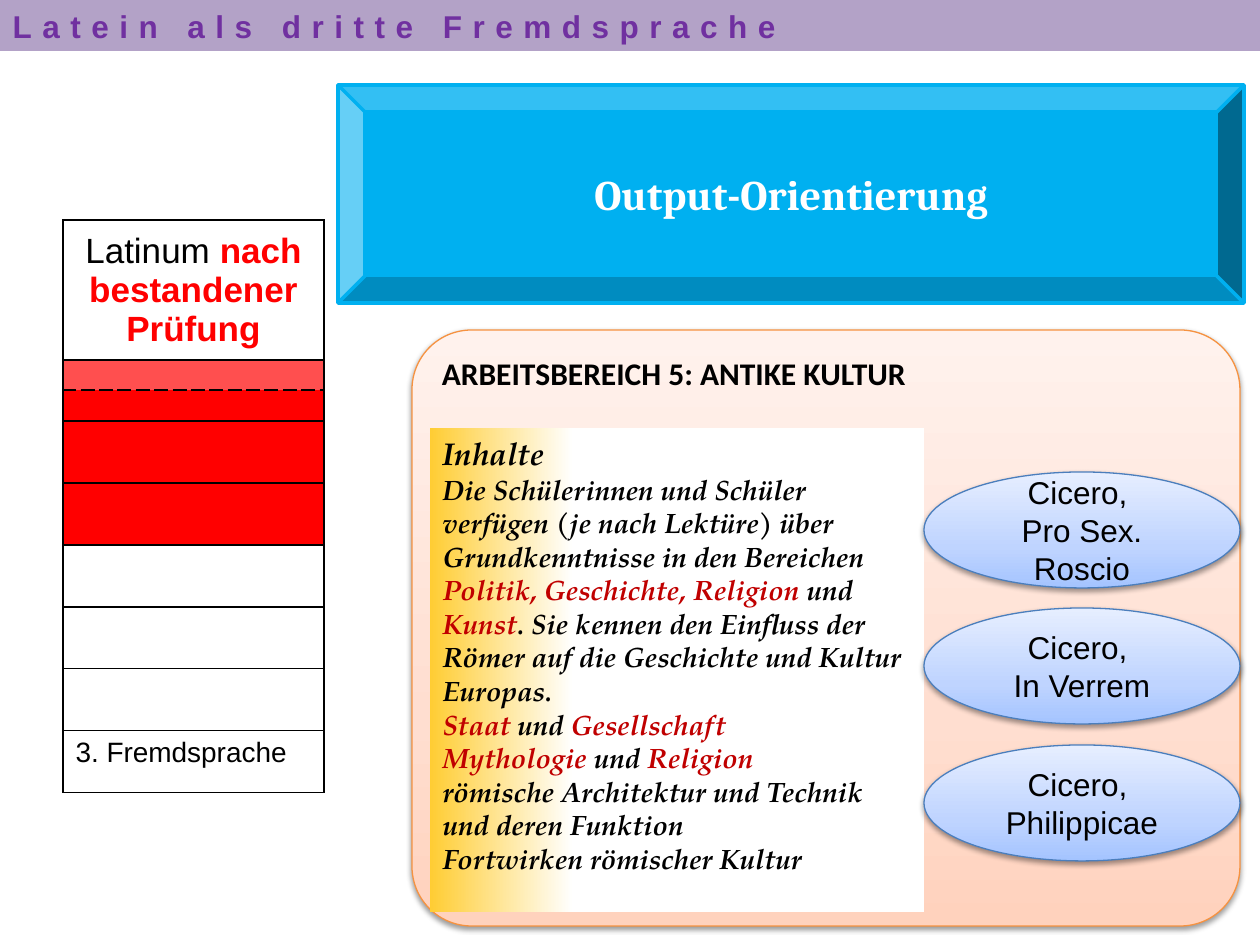
from dataclasses import dataclass
from typing import Optional

from lxml.etree import SubElement
from pptx import Presentation
from pptx.dml.color import RGBColor
from pptx.enum.shapes import MSO_SHAPE
from pptx.enum.text import MSO_ANCHOR, MSO_AUTO_SIZE, PP_ALIGN
from pptx.oxml.ns import qn
from pptx.util import Emu, Pt

SCALE = 914400 / 126

BLACK = RGBColor(0x00, 0x00, 0x00)
WHITE = RGBColor(0xFF, 0xFF, 0xFF)
PURPLE = RGBColor(0x70, 0x30, 0xA0)
LILAC = RGBColor(0xB3, 0xA2, 0xC7)
SKY = RGBColor(0x00, 0xB0, 0xF0)
BLUE = RGBColor(0x4B, 0x7E, 0xBC)
ORANGE = RGBColor(0xF6, 0x92, 0x40)
RED = RGBColor(0xFF, 0x00, 0x00)
ROSE = RGBColor(0xFF, 0x4F, 0x4F)
CRIMSON = RGBColor(0xC0, 0x00, 0x00)

PEACH_FADE = [(0, RGBColor(0xFF, 0xD2, 0xBD)), (35, RGBColor(0xFF, 0xDE, 0xD0)),
              (100, RGBColor(0xFF, 0xF2, 0xED))]
BLUE_FADE = [(0, RGBColor(0xA4, 0xC4, 0xFF)), (35, RGBColor(0xBF, 0xD4, 0xFF)),
             (100, RGBColor(0xE6, 0xEE, 0xFF))]
GOLD_FADE = [(0, RGBColor(0xFF, 0xCD, 0x33)), (29, WHITE), (100, WHITE)]


@dataclass
class Box:
    left: int
    top: int
    width: int
    height: int


@dataclass
class Font:
    name: str
    size: int
    color: Optional[RGBColor] = BLACK
    bold: bool = False
    italic: bool = False


@dataclass
class Row:
    height: int
    fill: Optional[RGBColor] = None
    top: str = "solid"
    bottom: str = "solid"


ROWS = [Row(140), Row(30, ROSE, bottom="sysDash"), Row(31, RED, top="sysDash"),
        *[Row(62, RED)] * 2, *[Row(62)] * 4]

WORKS = ["Pro Sex. Roscio", "In Verrem", "Philippicae"]

# Each paragraph is a list of (text, colour) runs.
TOPICS = [
    [("Inhalte", BLACK)],
    [("Die Schülerinnen und Schüler verfügen (je nach Lektüre) über "
      "Grundkenntnisse in den Bereichen ", BLACK),
     ("Politik, Geschichte, Religion ", CRIMSON), ("und ", BLACK), ("Kunst", CRIMSON),
     (". Sie kennen den Einfluss der Römer auf die Geschichte und Kultur Europas.", BLACK)],
    [("Staat ", CRIMSON), ("und", BLACK), (" Gesellschaft", CRIMSON)],
    [("Mythologie ", CRIMSON), ("und ", BLACK), ("Religion", CRIMSON)],
    [("römische Architektur und Technik und deren Funktion", BLACK)],
    [("Fortwirken römischer Kultur", BLACK)],
]


def px(n: int) -> Emu:
    return Emu(round(n * SCALE))


def place(shape, box: Box) -> None:
    shape.left, shape.top = px(box.left), px(box.top)
    shape.width, shape.height = px(box.width), px(box.height)


def style(para, font: Font, align=PP_ALIGN.LEFT) -> None:
    para.alignment = align
    face = para.font
    face.name, face.size = font.name, Pt(font.size)
    face.bold, face.italic = font.bold, font.italic
    if font.color is not None:
        face.color.rgb = font.color


def add_run(para, text: str, color: RGBColor):
    run = para.add_run()
    run.text = text
    run.font.color.rgb = color
    return run


def fade(shape, stops: list, angle: int) -> None:
    """Fill with a linear gradient; the angle runs counter-clockwise."""
    shape.fill.gradient()
    shape.fill.gradient_angle = angle
    group = shape._element.spPr.find(qn("a:gradFill")).find(qn("a:gsLst"))
    for old in list(group):
        group.remove(old)
    for pos, color in stops:
        stop = SubElement(group, qn("a:gs"), pos=str(pos * 1000))
        SubElement(stop, qn("a:srgbClr"), val=str(color))


def cast_shadow(shape) -> None:
    effects = shape._element.spPr.find(qn("a:effectLst"))
    shade = SubElement(effects, qn("a:outerShdw"), blurRad=str(Pt(3.1)),
                       dist=str(Pt(1.6)), dir="5400000", rotWithShape="0")
    color = SubElement(shade, qn("a:srgbClr"), val=str(BLACK))
    SubElement(color, qn("a:alpha"), val="38000")


def add_shape(slide, kind, box: Box, line: RGBColor, width: float):
    shape = slide.shapes.add_shape(kind, *map(px, (box.left, box.top, box.width, box.height)))
    shape.shadow.inherit = False
    shape.line.color.rgb = line
    shape.line.width = Pt(width)
    shape.text_frame.word_wrap = True
    return shape


def add_lines(frame, texts: list, font: Font, align) -> None:
    frame.text = "\n".join(texts)
    for para in frame.paragraphs:
        style(para, font, align)


def add_border(cell, side: str, dash: str) -> None:
    line = SubElement(cell._tc.get_or_add_tcPr(), qn(f"a:ln{side}"), w=str(Pt(1)))
    fill = SubElement(line, qn("a:solidFill"))
    SubElement(fill, qn("a:srgbClr"), val=str(BLACK))
    SubElement(line, qn("a:prstDash"), val=dash)


def add_ladder(slide) -> None:
    total = sum(row.height for row in ROWS)
    table = slide.shapes.add_table(len(ROWS), 1, px(63), px(220), px(261), px(total)).table
    table.first_row = table.horz_banding = False
    for i, row in enumerate(ROWS):
        table.rows[i].height = px(row.height)
        cell = table.cell(i, 0)
        for side, dash in zip("LRTB", ("solid", "solid", row.top, row.bottom)):
            add_border(cell, side, dash)
        if row.fill is None:
            cell.fill.background()
        else:
            cell.fill.solid()
            cell.fill.fore_color.rgb = row.fill
        if 0 < i < len(ROWS) - 1:
            cell.margin_top = cell.margin_bottom = 0
            SubElement(cell.text_frame.paragraphs[0]._p, qn("a:endParaRPr"), sz="800")

    head = table.cell(0, 0)
    head.vertical_anchor = MSO_ANCHOR.MIDDLE
    para = head.text_frame.paragraphs[0]
    style(para, Font("Arial", 20, None), PP_ALIGN.CENTER)
    add_run(para, "Latinum ", BLACK)
    add_run(para, "nach bestandener Prüfung", RED).font.bold = True
    add_lines(table.cell(len(ROWS) - 1, 0).text_frame, ["3. Fremdsprache"],
              Font("Arial", 16), PP_ALIGN.LEFT)


def add_title(title) -> None:
    place(title, Box(0, 0, 1260, 51))
    title.fill.solid()
    title.fill.fore_color.rgb = LILAC
    frame = title.text_frame
    frame.auto_size = MSO_AUTO_SIZE.NONE
    frame.vertical_anchor = MSO_ANCHOR.MIDDLE
    add_lines(frame, ["Latein als dritte Fremdsprache"],
              Font("Arial", 18, PURPLE, bold=True), PP_ALIGN.LEFT)
    frame.paragraphs[0].runs[0]._r.get_or_add_rPr().set("spc", "600")


def add_topics(body) -> None:
    place(body, Box(430, 428, 494, 484))
    fade(body, GOLD_FADE, 0)
    frame = body.text_frame
    frame.auto_size = MSO_AUTO_SIZE.NONE
    for i, runs in enumerate(TOPICS):
        para = frame.add_paragraph() if i else frame.paragraphs[0]
        style(para, Font("TeX Gyre Pagella", 16 if i else 18, None, True, True))
        para.space_before = Pt(0)
        props = para._p.get_or_add_pPr()
        props.set("marL", "0")
        props.set("indent", "0")
        props.insert_element_before(props.makeelement(qn("a:buNone")), "a:defRPr")
        for text, color in runs:
            add_run(para, text, color)


def main() -> None:
    deck = Presentation()
    deck.slide_width, deck.slide_height = px(1260), px(945)
    slide = deck.slides.add_slide(deck.slide_layouts[1])
    title, body = slide.placeholders

    banner = add_shape(slide, MSO_SHAPE.BEVEL, Box(338, 85, 906, 218), SKY, 2)
    banner.fill.solid()
    banner.fill.fore_color.rgb = SKY
    add_lines(banner.text_frame, ["Output-Orientierung"],
              Font("Cambria", 24, WHITE, bold=True), PP_ALIGN.CENTER)
    add_ladder(slide)

    panel = add_shape(slide, MSO_SHAPE.ROUNDED_RECTANGLE, Box(412, 330, 828, 596), ORANGE, 0.75)
    panel.adjustments[0] = 0.1
    fade(panel, PEACH_FADE, 90)
    cast_shadow(panel)
    panel.text_frame.vertical_anchor = MSO_ANCHOR.TOP
    add_lines(panel.text_frame, ["ARBEITSBEREICH 5: ANTIKE KULTUR"],
              Font("Calibri", 18, bold=True), PP_ALIGN.LEFT)

    panel._element.addnext(body._element)
    add_topics(body)
    add_title(title)

    for i, work in enumerate(WORKS):
        oval = add_shape(slide, MSO_SHAPE.OVAL, Box(924, 472 + i * 273 // 2, 316, 116), BLUE, 0.75)
        fade(oval, BLUE_FADE, 90)
        cast_shadow(oval)
        add_lines(oval.text_frame, ["Cicero, ", work], Font("Arial", 18), PP_ALIGN.CENTER)

    deck.save("out.pptx")


if __name__ == "__main__":
    main()
